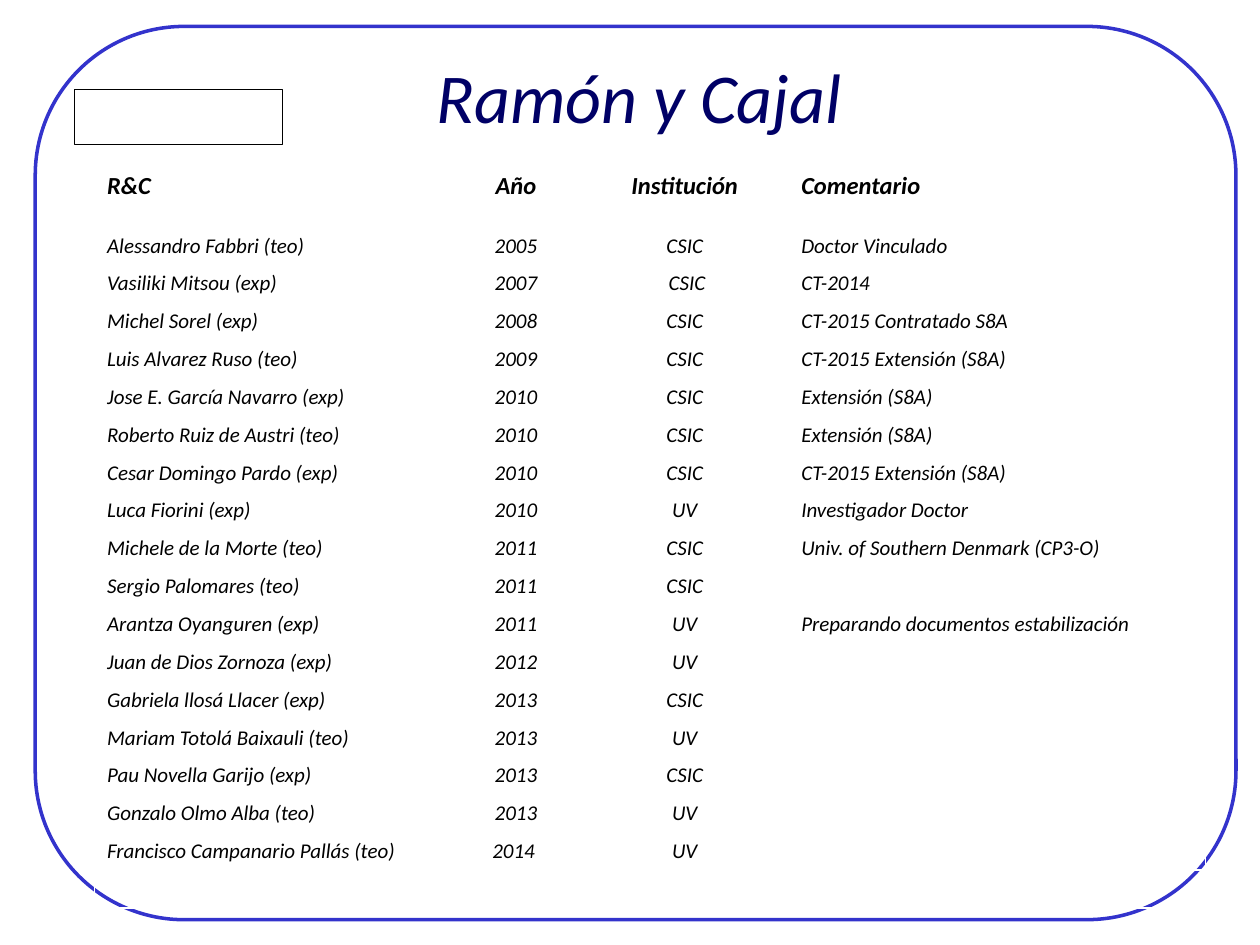
from collections import namedtuple

from lxml import etree
from pptx import Presentation
from pptx.dml.color import RGBColor
from pptx.enum.shapes import MSO_SHAPE
from pptx.enum.text import MSO_ANCHOR, PP_ALIGN
from pptx.oxml.ns import qn
from pptx.util import Inches, Pt

ROUNDED, RECTANGLE = MSO_SHAPE.ROUNDED_RECTANGLE, MSO_SHAPE.RECTANGLE
LEFT, CENTER = PP_ALIGN.LEFT, PP_ALIGN.CENTER
MIDDLE = MSO_ANCHOR.MIDDLE

PAGE_WIDTH, PAGE_HEIGHT = Inches(10), Inches(7.5)
COLORS = {"frame": "3333CC", "label": "000000", "title": "000066", "text": "000000"}
FONT = "Calibri"
TITLE_FORMAT = {"name": FONT, "size": Pt(40), "italic": True}
HEADER_FORMAT = {"name": FONT, "size": Pt(14), "bold": True, "italic": True}
BODY_FORMAT = {"name": FONT, "size": Pt(12), "bold": False, "italic": True}

COLUMN_WEIGHTS = (2.83, 1.03, 1.65, 3.31)
COLUMN_ALIGNMENTS = (LEFT, CENTER, CENTER, LEFT)
HEADER_WEIGHT, BODY_WEIGHT = 0.49, 0.3
HANGING_INDENT = Inches(0.38)

HEADER = ("R&C", "Año", "Institución", "Comentario")
FELLOWS = (
    ("Alessandro Fabbri (teo)", "2005", "CSIC", "Doctor Vinculado"),
    ("Vasiliki Mitsou (exp)", "2007", " CSIC", "CT-2014"),
    ("Michel Sorel (exp)", "2008", "CSIC", "CT-2015 Contratado S8A"),
    ("Luis Alvarez Ruso (teo)", "2009", "CSIC", "CT-2015 Extensión (S8A)"),
    ("Jose E. García Navarro (exp)", "2010", "CSIC", "Extensión (S8A)"),
    ("Roberto Ruiz de Austri (teo)", "2010", "CSIC", "Extensión (S8A)"),
    ("Cesar Domingo Pardo (exp)", "2010", "CSIC", "CT-2015 Extensión (S8A)"),
    ("Luca Fiorini (exp)", "2010", "UV", "Investigador Doctor"),
    ("Michele de la Morte (teo)", "2011", "CSIC", "Univ. of Southern Denmark (CP3-O)"),
    ("Sergio Palomares (teo)", "2011", "CSIC", ""),
    ("Arantza Oyanguren (exp)", "2011", "UV", "Preparando documentos estabilización"),
    ("Juan de Dios Zornoza (exp)", "2012", "UV", ""),
    ("Gabriela llosá Llacer (exp)", "2013", "CSIC", ""),
    ("Mariam Totolá Baixauli (teo)", "2013", "UV", ""),
    ("Pau Novella Garijo (exp)", "2013", "CSIC", ""),
    ("Gonzalo Olmo Alba (teo)", "2013", "UV", ""),
    ("Francisco Campanario Pallás (teo)", "2014 ", "UV", ""),
    ("", "", "", ""),
)

Box = namedtuple("Box", "left top width height")


def area(left, top, width, height):
    """Turn percentages of the page into a box."""
    return Box(
        int(PAGE_WIDTH * left / 100),
        int(PAGE_HEIGHT * top / 100),
        int(PAGE_WIDTH * width / 100),
        int(PAGE_HEIGHT * height / 100),
    )


def write(para, text, formats, color):
    span = para.add_run()
    span.text = text
    for name, value in formats.items():
        setattr(span.font, name, value)
    span.font.color.rgb = RGBColor.from_string(color)


def add_outline(page, box, preset, color, weight):
    outline = page.shapes.add_shape(preset, *box)
    outline.shadow.inherit = False
    outline.fill.background()
    outline.line.color.rgb = RGBColor.from_string(color)
    outline.line.width = Pt(weight)


def add_title(page, box, text):
    frame = page.shapes.add_textbox(*box).text_frame
    frame.word_wrap = True
    frame.vertical_anchor = MIDDLE
    para = frame.paragraphs[0]
    para.alignment = CENTER
    write(para, text, TITLE_FORMAT, COLORS["title"])


def fill_cell(cell, text, alignment, formats):
    cell.fill.background()
    para = cell.text_frame.paragraphs[0]
    para.alignment = alignment
    if text:
        properties = para._p.get_or_add_pPr()
        properties.set("marL", str(HANGING_INDENT))
        properties.set("indent", str(-HANGING_INDENT))
        write(para, text, formats, COLORS["text"])
    else:
        # The end mark keeps an empty cell as low as its row.
        end_mark = etree.SubElement(para._p, qn("a:endParaRPr"))
        end_mark.set("sz", str(int(formats["size"].pt * 100)))


def add_fellows_table(page, box):
    rows = (HEADER, *FELLOWS)
    table = page.shapes.add_table(len(rows), len(HEADER), *box).table
    table.first_row = table.horz_banding = False
    for column, weight in zip(table.columns, COLUMN_WEIGHTS):
        column.width = int(box.width * weight / sum(COLUMN_WEIGHTS))
    row_weights = [HEADER_WEIGHT] + [BODY_WEIGHT] * len(FELLOWS)
    for index, (row, texts) in enumerate(zip(table.rows, rows)):
        row.height = int(box.height * row_weights[index] / sum(row_weights))
        formats = BODY_FORMAT if index else HEADER_FORMAT
        for cell, text, alignment in zip(row.cells, texts, COLUMN_ALIGNMENTS):
            fill_cell(cell, text, alignment, formats)


def main():
    deck = Presentation()
    deck.slide_width, deck.slide_height = PAGE_WIDTH, PAGE_HEIGHT
    page = deck.slides.add_slide(deck.slide_layouts[6])
    add_outline(page, area(2.8, 2.8, 95.3, 94.53), ROUNDED, COLORS["frame"], 2)
    add_outline(page, area(5.9, 9.47, 16.5, 5.87), RECTANGLE, COLORS["label"], 0.5)
    add_title(page, area(5.7, 4.8, 90, 10.53), "Ramón y Cajal")
    add_fellows_table(page, area(7.5, 17.47, 88.2, 78.53))
    deck.save("out.pptx")


if __name__ == "__main__":
    main()
